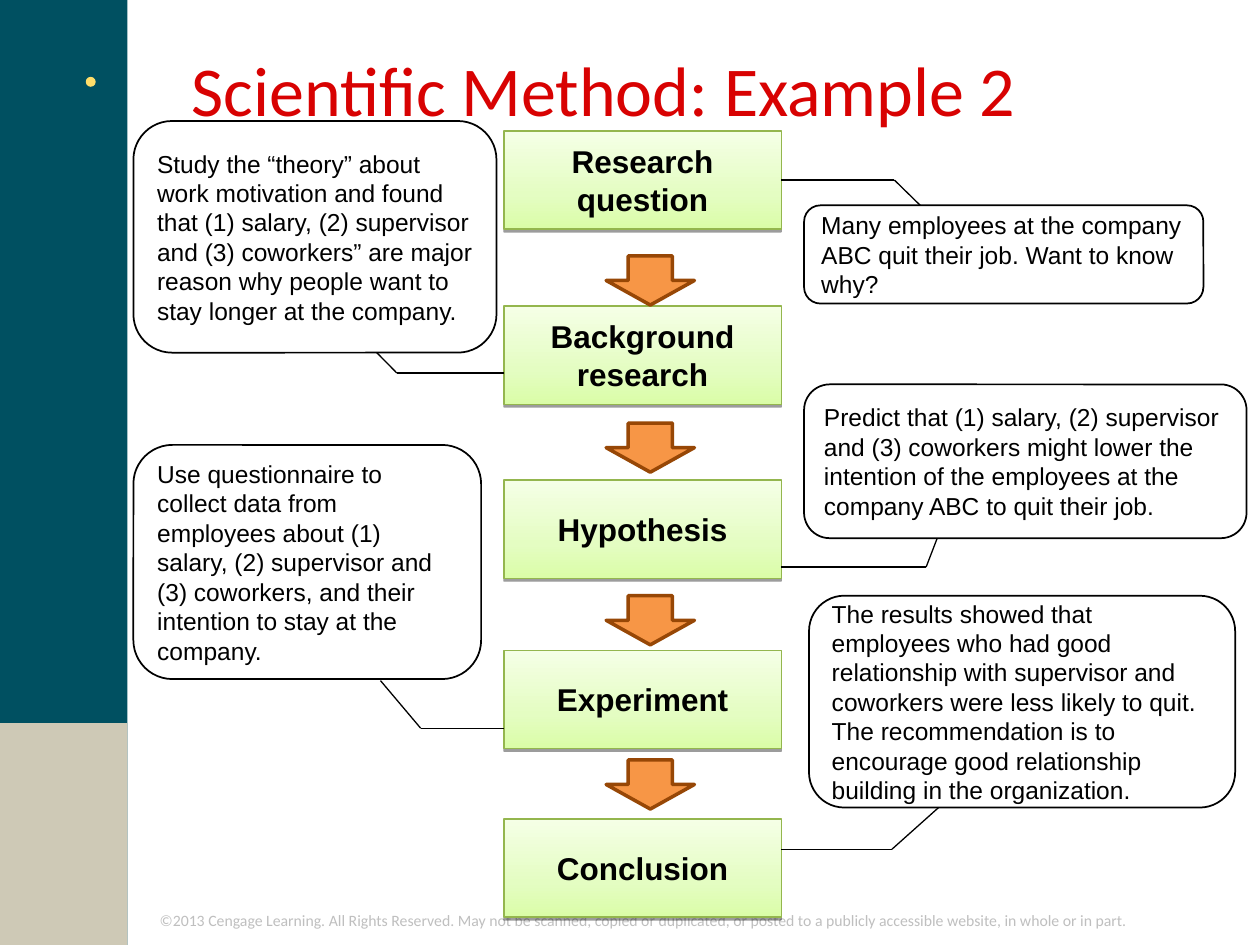
from copy import deepcopy

from lxml.etree import SubElement
from pptx import Presentation
from pptx.dml.color import RGBColor
from pptx.enum.shapes import MSO_CONNECTOR as Link, MSO_SHAPE as Kind
from pptx.enum.text import MSO_ANCHOR as Anchor, MSO_AUTO_SIZE as Fit, PP_ALIGN as Align
from pptx.oxml.ns import qn
from pptx.util import Cm, Pt

STEP_X, STEP_W, STEP_H = 10.16, 5.59, 1.98
STEP_R = STEP_X + STEP_W
STEPS = [
    ("Research question", 2.64),
    ("Background research", 6.17),
    ("Hypothesis", 9.68),
    ("Experiment", 13.11),
    ("Conclusion", 16.51),
]
ARROWS = [5.16, 8.53, 12.01, 15.32]
GREENS = [(0, "DAFDA7"), (0.35, "E4FDC2"), (1, "F5FFE6")]

# Start at the note, bend, then run level to the step's edge.
LEADS = [
    (18.92, 4.5, 18.03, 3.63, STEP_R),
    (7.42, 6.93, 8, 7.52, STEP_X),
    (19.02, 10.52, 18.67, 11.43, STEP_R),
    (7.67, 13.72, 8.48, 14.68, STEP_X),
    (18.92, 16.28, 17.98, 17.12, STEP_R),
]
NOTES = [
    ((16.21, 4.14, 8.05, 1.98),
     "Many employees at the company ABC quit their job. Want to know why?"),
    ((2.69, 2.44, 7.32, 4.67),
     "Study the “theory” about work motivation and found that (1) salary, "
     "(2) supervisor and (3) coworkers” are major reason why people want to "
     "stay longer at the company."),
    ((16.21, 7.75, 8.92, 3.1),
     "Predict that (1) salary, (2) supervisor and (3) coworkers might lower "
     "the intention of the employees at the company ABC to quit their job."),
    ((2.69, 8.97, 7.01, 4.72),
     "Use questionnaire to collect data from employees about (1) salary, "
     "(2) supervisor and (3) coworkers, and their intention to stay at the "
     "company."),
    ((16.31, 12.01, 8.59, 4.27),
     "The results showed that employees who had good relationship with "
     "supervisor and coworkers were less likely to quit. The recommendation "
     "is to encourage good relationship building in the organization."),
]
RIGHTS = ("©2013 Cengage Learning. All Rights Reserved. May not be scanned, "
          "copied or duplicated, or posted to a publicly accessible website, "
          "in whole or in part.")


def rgb(code):
    return RGBColor.from_string(code)


def write(shape, text, size, font="Arial", color="000000", bold=False,
          align=Align.LEFT, anchor=Anchor.MIDDLE):
    frame = shape.text_frame
    frame.word_wrap = True
    frame.auto_size = Fit.NONE
    frame.vertical_anchor = anchor
    para = frame.paragraphs[0]
    para.alignment = align
    run = para.add_run()
    run.text = text
    run.font.size = Pt(size)
    run.font.name = font
    run.font.bold = bold
    run.font.color.rgb = rgb(color)


def add_form(slide, kind, box, fill, line=None, width=1):
    form = slide.shapes.add_shape(kind, *map(Cm, box))
    form.shadow.inherit = False
    form.fill.solid()
    form.fill.fore_color.rgb = rgb(fill)
    if line:
        form.line.color.rgb = rgb(line)
        form.line.width = Pt(width)
    else:
        form.line.fill.background()
    return form


def shade(form):
    """Fill a shape with the three-stop green gradient, dark at the bottom."""
    form.fill.gradient()
    form.fill.gradient_angle = 90
    stops = form._element.spPr.find(qn("a:gradFill")).find(qn("a:gsLst"))
    stops.append(deepcopy(stops[-1]))
    for stop, (pos, color) in zip(form.fill.gradient_stops, GREENS):
        stop.position = pos
        stop.color.rgb = rgb(color)


def drop_shadow(form):
    effects = form._element.spPr.find(qn("a:effectLst"))
    outer = SubElement(effects, qn("a:outerShdw"), blurRad="0",
                       dist=str(Pt(1.6)), dir="5400000", rotWithShape="0")
    tint = SubElement(outer, qn("a:srgbClr"), val="000000")
    SubElement(tint, qn("a:alpha"), val="38000")


def add_step(slide, text, top):
    step = add_form(slide, Kind.RECTANGLE, (STEP_X, top, STEP_W, STEP_H),
                    GREENS[0][1], "94B64E", 0.75)
    shade(step)
    drop_shadow(step)
    write(step, text, 18, bold=True, align=Align.CENTER)
    return step


def add_line(slide, *ends):
    line = slide.shapes.add_connector(Link.STRAIGHT, *map(Cm, ends))
    line.line.color.rgb = rgb("000000")
    line.line.width = Pt(0.75)
    SubElement(line._element.spPr, qn("a:effectLst"))
    return line


def add_lead(slide, x, y, bend, level, edge):
    add_line(slide, x, y, bend, level)
    return add_line(slide, bend, level, edge, level)


def add_note(slide, box, text):
    note = add_form(slide, Kind.ROUNDED_RECTANGLE, box, "FFFFFF", "000000")
    write(note, text, 14)


def add_frame(slide):
    """Draw the side bands, the dot and the copyright line."""
    add_form(slide, Kind.RECTANGLE, (0, 0, 2.57, 19.05), "005061")
    add_form(slide, Kind.RECTANGLE, (0, 14.58, 2.57, 4.47), "CEC9B6")
    add_form(slide, Kind.OVAL, (1.73, 1.55, 0.2, 0.2), "FFDE6A")
    foot = slide.shapes.add_textbox(*map(Cm, (2.97, 18.24, 22.43, 0.64)))
    write(foot, RIGHTS, 9, "Calibri", "BFBFBF", anchor=Anchor.TOP)


def set_title(slide, text):
    title = slide.shapes.title
    title.left, title.top, title.width, title.height = map(
        Cm, (3.61, 0.56, 22, 2.44))
    write(title, text, 40, "Calibri", "D80202")


def main():
    deck = Presentation()
    deck.slide_width, deck.slide_height = Cm(25.4), Cm(19.05)
    slide = deck.slides.add_slide(deck.slide_layouts[5])
    add_frame(slide)
    set_title(slide, "Scientific Method: Example 2")
    steps = [add_step(slide, *step) for step in STEPS]
    for top in ARROWS:
        add_form(slide, Kind.DOWN_ARROW, (12.22, top, 1.78, 0.99),
                 "F79646", "974706", 2)
    leads = [add_lead(slide, *lead) for lead in LEADS]
    leads[0].end_connect(steps[0], 3)
    for note in NOTES:
        add_note(slide, *note)
    deck.save("out.pptx")


if __name__ == "__main__":
    main()
